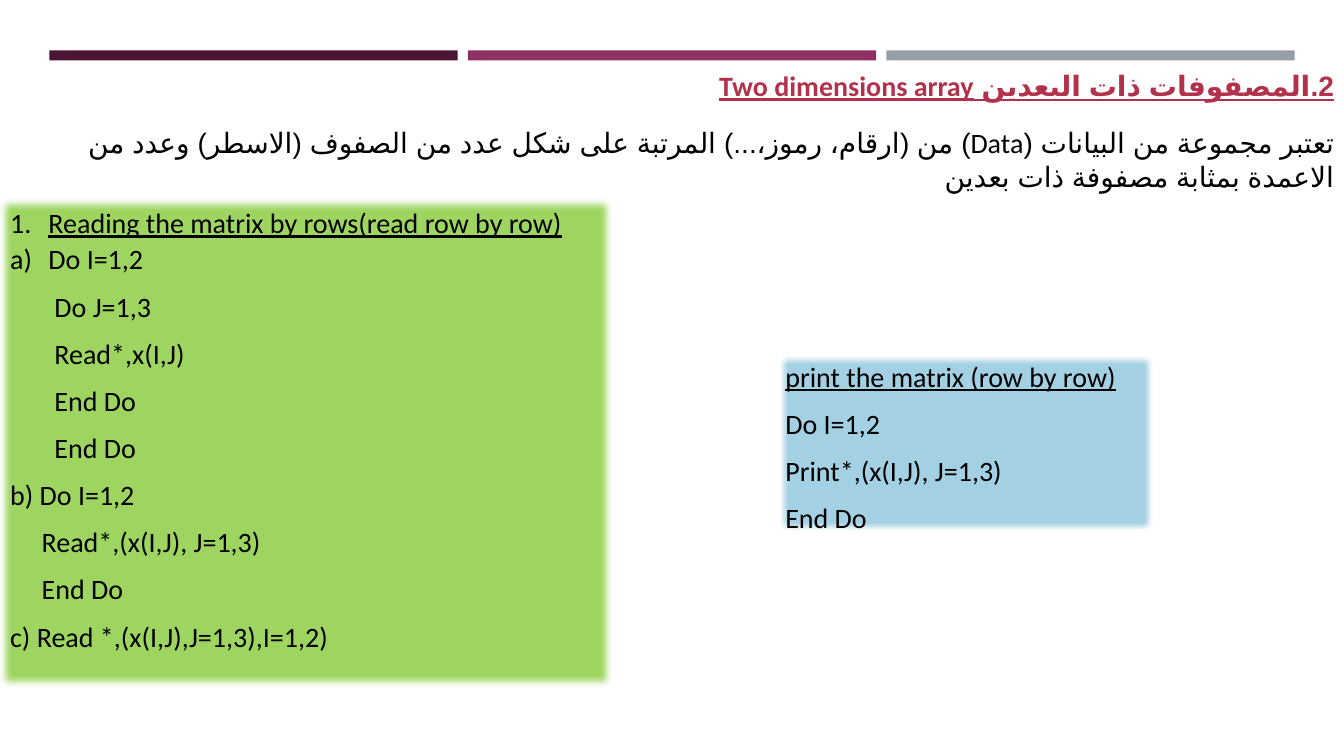
from lxml import etree
from pptx import Presentation
from pptx.dml.color import RGBColor
from pptx.enum.shapes import MSO_SHAPE
from pptx.enum.text import MSO_ANCHOR, MSO_AUTO_SIZE, PP_ALIGN
from pptx.oxml.ns import qn
from pptx.util import Inches, Pt

RECT = MSO_SHAPE.RECTANGLE
TOP = MSO_ANCHOR.TOP
NO_FIT = MSO_AUTO_SIZE.NONE
LEFT, RIGHT = PP_ALIGN.LEFT, PP_ALIGN.RIGHT
FONT, ARABIC = "Calibri", "Arial"
COLORS = {"plum": "4D1434", "berry": "903163", "gray": "969FA7", "red": "B2324B",
          "black": "000000", "green": "9ED561", "blue": "A3D0E2"}


def write(box, lines, color="black", bold=None, rtl=False, space=1.07, after=8):
    """Fill a box with (text, options) lines."""
    frame = box.text_frame
    frame.word_wrap = True
    frame.auto_size = NO_FIT
    frame.vertical_anchor = TOP
    for i, (text, opts) in enumerate(lines):
        para = frame.paragraphs[0] if i == 0 else frame.add_paragraph()
        props = para._p.get_or_add_pPr()
        props.set("marL", str(Inches(opts.get("left", 0))))
        props.set("indent", str(Inches(opts.get("hang", 0))))
        if "num" in opts:
            etree.SubElement(props, qn("a:buFont"), typeface="+mj-lt")
            etree.SubElement(props, qn("a:buAutoNum"), type=opts["num"])
        else:
            etree.SubElement(props, qn("a:buNone"))
        para.alignment = RIGHT if rtl else LEFT
        para.line_spacing = space
        para.space_before = Pt(0)
        para.space_after = Pt(opts.get("after", after))
        run = para.add_run()
        run.text = text
        font = run.font
        font.name, font.size, font.bold = FONT, Pt(20), bold
        font.underline = opts.get("line", False)
        font.color.rgb = RGBColor.from_string(COLORS[color])
        if rtl:
            props.set("rtl", "1")
            look = run._r.get_or_add_rPr()
            look.set("lang", "ar-IQ")
            etree.SubElement(look, qn("a:cs"), typeface=ARABIC)


def place(shape, x, y, w, h, fill=None, soft=False):
    """Set the place, fill and soft edge of a shape."""
    shape.left, shape.top = Inches(x), Inches(y)
    shape.width, shape.height = Inches(w), Inches(h)
    shape.shadow.inherit = False
    if fill:
        shape.fill.solid()
        shape.fill.fore_color.rgb = RGBColor.from_string(COLORS[fill])
    if soft:
        shape.line.color.rgb = RGBColor.from_string(COLORS["black"])
        shape.line.width = Pt(0.5)
        effects = shape._element.spPr.find(qn("a:effectLst"))
        etree.SubElement(effects, qn("a:softEdge"), rad=str(Pt(5)))
    else:
        shape.line.fill.background()
    return shape


deck = Presentation()
deck.slide_width, deck.slide_height = Inches(13.33), Inches(7.5)
slide = deck.slides.add_slide(deck.slide_layouts[1])
shapes = slide.shapes

# Top bars
for i, name in enumerate(["plum", "berry", "gray"]):
    bar = shapes.add_shape(RECT, 0, 0, 0, 0)
    place(bar, 0.49 + 4.15 * i, 0.5, 4.05, 0.1, name)

# Title
title = place(shapes.title, 6.66, 0.61, 6.67, 0.46)
write(title, [("2.المصفوفات ذات البعدين Two dimensions array", {"line": True})],
      color="red", bold=True, rtl=True)

# Definition
intro = place(shapes.add_textbox(0, 0, 0, 0), 0, 1.2, 13.33, 0.44)
write(intro, [("تعتبر مجموعة من البيانات (Data) من (ارقام، رموز،...) المرتبة على شكل "
               "عدد من الصفوف (الاسطر) وعدد من الاعمدة بمثابة مصفوفة ذات بعدين", {})],
      rtl=True, space=1.0, after=0)

# Reading the matrix
item = {"left": 0.38, "hang": -0.38}
step = {"left": 0.25}
read = place(slide.placeholders[1], 0, 1.97, 6.07, 4.85, "green", soft=True)
write(read, [
    ("Reading the matrix by rows(read row by row)",
     {**item, "num": "arabicPeriod", "line": True, "after": 0}),
    ("Do I=1,2", {**item, "num": "alphaLcParenR"}),
    ("       Do J=1,3", {}),
    ("       Read*,x(I,J)", {}),
    ("       End Do", {}),
    ("       End Do", {}),
    ("b) Do I=1,2", {}),
    (" Read*,(x(I,J), J=1,3)", step),
    (" End Do", step),
    ("c) Read *,(x(I,J),J=1,3),I=1,2)", {}),
])

# Printing the matrix
show = place(shapes.add_shape(RECT, 0, 0, 0, 0), 7.69, 3.49, 3.78, 1.81, "blue", soft=True)
write(show, [
    ("print the matrix (row by row)", {"line": True}),
    ("Do I=1,2", {}),
    ("Print*,(x(I,J), J=1,3)", {}),
    ("End Do", {}),
])

deck.save("out.pptx")
